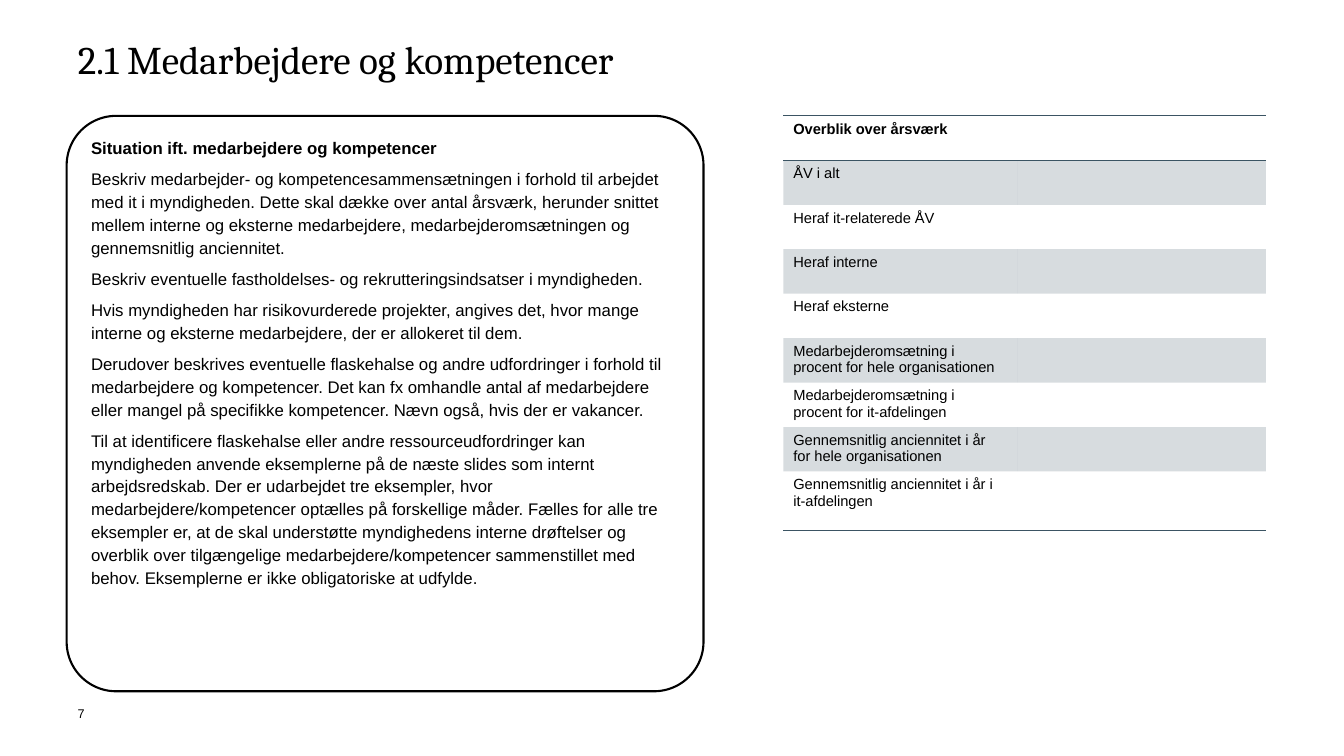
"""Build the slide on staff and competences with a guidance box and an overview table."""
import pptx
import pptx.dml.color
import pptx.enum.shapes
import pptx.enum.text
import pptx.oxml.ns
import pptx.util
from lxml import etree
from pptx.util import Cm, Pt

TITLE = "2.1 Medarbejdere og kompetencer"
PAGE = "7"
GUIDANCE = [
    "Situation ift. medarbejdere og kompetencer",
    "Beskriv medarbejder- og kompetencesammensætningen i forhold til arbejdet med it i myndigheden. "
    "Dette skal dække over antal årsværk, herunder snittet mellem interne og eksterne medarbejdere, "
    "medarbejderomsætningen og gennemsnitlig anciennitet.",
    "Beskriv eventuelle fastholdelses- og rekrutteringsindsatser i myndigheden.",
    "Hvis myndigheden har risikovurderede projekter, angives det, hvor mange interne og eksterne "
    "medarbejdere, der er allokeret til dem.",
    "Derudover beskrives eventuelle flaskehalse og andre udfordringer i forhold til medarbejdere og "
    "kompetencer. Det kan fx omhandle antal af medarbejdere eller mangel på specifikke kompetencer. "
    "Nævn også, hvis der er vakancer.",
    "Til at identificere flaskehalse eller andre ressourceudfordringer kan myndigheden anvende "
    "eksemplerne på de næste slides som internt arbejdsredskab. Der er udarbejdet tre eksempler, hvor "
    "medarbejdere/kompetencer optælles på forskellige måder. Fælles for alle tre eksempler er, at de "
    "skal understøtte myndighedens interne drøftelser og overblik over tilgængelige "
    "medarbejdere/kompetencer sammenstillet med behov. Eksemplerne er ikke obligatoriske at udfylde.",
]
OVERVIEW = [
    "Overblik over årsværk",
    "ÅV i alt",
    "Heraf it-relaterede ÅV",
    "Heraf interne",
    "Heraf eksterne",
    "Medarbejderomsætning i procent for hele organisationen",
    "Medarbejderomsætning i procent for it-afdelingen",
    "Gennemsnitlig anciennitet i år for hele organisationen",
    "Gennemsnitlig anciennitet i år i it-afdelingen",
]
COLUMNS = [5.89, 6.27]
ROW, LAST_ROW = 1.12, 1.49
LEFT, TOP = 1.96, 2.92
BLACK, SLATE = "000000", "3B5463"


def rgb(color):
    return pptx.dml.color.RGBColor.from_string(color)


def style(p, size, name="Arial", bold=False):
    p.font.size, p.font.name, p.font.bold = Pt(size), name, bold
    p.font.color.rgb = rgb(BLACK)


def no_margins(tf):
    tf.margin_left = tf.margin_top = tf.margin_right = tf.margin_bottom = 0
    tf.vertical_anchor = pptx.enum.text.MSO_ANCHOR.TOP
    tf.word_wrap = True


def set_borders(cell, ruled):
    qn = pptx.oxml.ns.qn
    tc_pr = cell._tc.get_or_add_tcPr()
    for i, side in enumerate(["lnL", "lnR", "lnT", "lnB"]):
        ln = etree.Element(qn("a:" + side), w=str(Pt(1)))
        if side in ruled:
            fill = etree.SubElement(ln, qn("a:solidFill"))
            etree.SubElement(fill, qn("a:srgbClr"), val=SLATE)
        else:
            etree.SubElement(ln, qn("a:noFill"))
        tc_pr.insert(i, ln)


def fill_band(cell):
    cell.fill.solid()
    cell.fill.fore_color.rgb = rgb(SLATE)
    color = cell._tc.tcPr.find(".//" + pptx.oxml.ns.qn("a:srgbClr"))
    etree.SubElement(color, pptx.oxml.ns.qn("a:alpha"), val="20000")


def add_title(s):
    sp = s.shapes.title
    sp.left, sp.top, sp.width, sp.height = Cm(LEFT), Cm(1.02), Cm(29.97), Cm(2.59)
    no_margins(sp.text_frame)
    sp.text_frame.text = TITLE
    p = sp.text_frame.paragraphs[0]
    p.alignment = pptx.enum.text.PP_ALIGN.LEFT
    p.line_spacing = 0.9
    style(p, 28, "Cambria")


def add_guidance(s):
    kind = pptx.enum.shapes.MSO_SHAPE.ROUNDED_RECTANGLE
    sp = s.shapes.add_shape(kind, Cm(1.68), Cm(TOP), Cm(16.05), Cm(14.5))
    sp.adjustments[0] = 0.086
    sp.shadow.inherit = False
    sp.fill.background()
    sp.line.color.rgb = rgb(BLACK)
    sp.line.width = Pt(1.5)
    tf = sp.text_frame
    tf.word_wrap = True
    tf.vertical_anchor = pptx.enum.text.MSO_ANCHOR.TOP
    for i, text in enumerate(GUIDANCE):
        p = tf.add_paragraph() if i else tf.paragraphs[0]
        p.text = text
        p.alignment = pptx.enum.text.PP_ALIGN.LEFT
        p.line_spacing = 1.13
        p.space_before = Pt(6 if i else 0)
        style(p, 12, bold=i == 0)


def add_overview(s):
    last = len(OVERVIEW) - 1
    heights = [ROW] * last + [LAST_ROW]
    table = s.shapes.add_table(len(OVERVIEW), len(COLUMNS), Cm(19.74), Cm(TOP),
                               Cm(sum(COLUMNS)), Cm(sum(heights))).table
    table.first_row = table.horz_banding = False
    for column, width in zip(table.columns, COLUMNS):
        column.width = Cm(width)
    for i, (row, text) in enumerate(zip(table.rows, OVERVIEW)):
        row.height = Cm(heights[i])
        row.cells[0].text = text
        ruled = {0: ["lnT", "lnB"], 1: ["lnT"], last: ["lnB"]}.get(i, [])
        for cell in row.cells:
            style(cell.text_frame.paragraphs[0], 10.5, bold=i == 0)
            if i % 2:
                fill_band(cell)
            else:
                cell.fill.background()
            set_borders(cell, ruled)


def add_page_number(s):
    tf = s.shapes.add_textbox(Cm(LEFT), Cm(17.78), Cm(0.79), Cm(0.76)).text_frame
    no_margins(tf)
    tf.text = PAGE
    style(tf.paragraphs[0], 9)


def main():
    prs = pptx.Presentation()
    prs.slide_width, prs.slide_height = Cm(33.87), Cm(19.05)
    s = prs.slides.add_slide(prs.slide_layouts[5])
    add_title(s)
    add_overview(s)
    add_guidance(s)
    add_page_number(s)
    prs.save("out.pptx")


if __name__ == "__main__":
    main()
